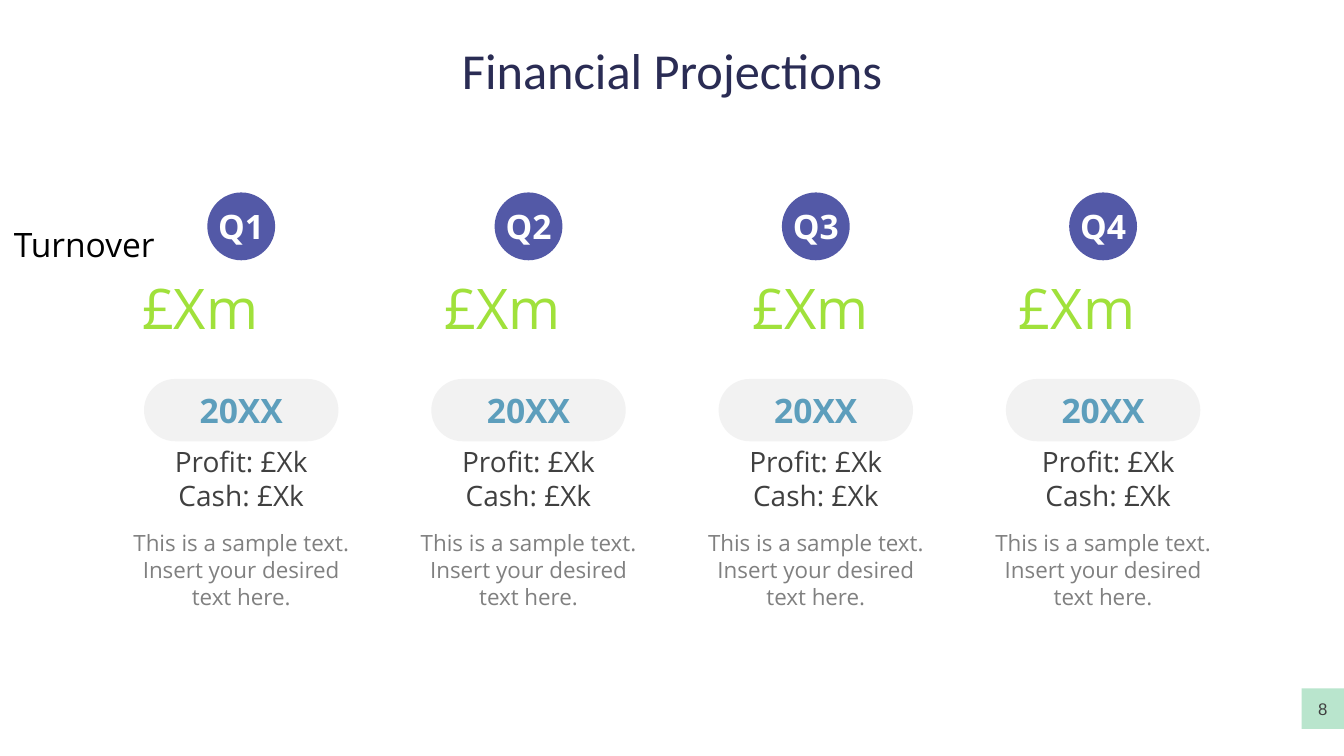
from pptx import Presentation
from pptx import util as u
from pptx.dml.color import RGBColor
from pptx.enum import shapes, text

NAVY = RGBColor(0x2A, 0x2C, 0x54)
INDIGO = RGBColor(0x53, 0x59, 0xA7)
LIME = RGBColor(0xA0, 0xE1, 0x3B)
BLUE = RGBColor(0x5D, 0x9E, 0xBC)
MINT = RGBColor(0xB9, 0xE5, 0xCD)
PALE = RGBColor(0xF2, 0xF2, 0xF2)
GREY = RGBColor(0x80, 0x80, 0x80)
DARK = RGBColor(0x40, 0x40, 0x40)
WHITE = RGBColor(0xFF, 0xFF, 0xFF)
BLACK = RGBColor(0x00, 0x00, 0x00)

BODY_FONT = "Open Sans"
CENTER = text.PP_ALIGN.CENTER
MIDDLE = text.MSO_ANCHOR.MIDDLE

# Lengths in centimetres
FIRST_CENTRE, COLUMN_STEP, COLUMN_WIDTH = 6.08, 7.24, 5.97
PILL_WIDTH, BADGE_SIZE = 4.9, 1.71

# Quarter, left edge of its turnover figure, sideways shift of its results
QUARTERS = [("Q1", 3.33, 0), ("Q2", 10.95, 0),
            ("Q3", 18.72, 0), ("Q4", 25.43, 0.13)]


def write(shape, lines, size, color, font=BODY_FONT, bold=False,
          align=CENTER, anchor=MIDDLE, wrap=True):
    frame = shape.text_frame
    frame.word_wrap = wrap
    frame.vertical_anchor = anchor
    frame.text = "\n".join(lines)
    for para in frame.paragraphs:
        para.alignment = align
        para.font.name = font
        para.font.size = u.Pt(size)
        para.font.bold = bold
        para.font.color.rgb = color


def add_text(page, left, top, width, height, lines, size, color, **style):
    box = page.shapes.add_textbox(u.Cm(left), u.Cm(top), u.Cm(width), u.Cm(height))
    write(box, lines, size, color, **style)
    return box


def add_label(page, kind, left, top, width, height, fill, label, size, color, **style):
    shape = page.shapes.add_shape(kind, u.Cm(left), u.Cm(top), u.Cm(width), u.Cm(height))
    shape.shadow.inherit = False
    shape.fill.solid()
    shape.fill.fore_color.rgb = fill
    shape.line.fill.background()
    shape.text_frame.margin_left = shape.text_frame.margin_right = 0
    write(shape, [label], size, color, **style)
    return shape


def add_quarter(page, centre, name, value_left, shift):
    left = centre - COLUMN_WIDTH / 2
    kinds = shapes.MSO_SHAPE
    add_text(page, left, 13.21, COLUMN_WIDTH, 2.31,
             ["This is a sample text. Insert your desired text here."],
             16, GREY, anchor=text.MSO_ANCHOR.TOP)
    add_text(page, left + shift, 11.07, COLUMN_WIDTH, 1.96,
             ["Profit: £Xk", "Cash: £Xk"], 20, DARK)
    pill = add_label(page, kinds.ROUNDED_RECTANGLE, centre - PILL_WIDTH / 2, 9.55,
                     PILL_WIDTH, 1.57, PALE, "20XX", 24, BLUE, bold=True)
    pill.adjustments[0] = 0.5
    add_text(page, value_left, 6.76, 3.48, 1.96, ["£Xm"], 40, LIME,
             align=text.PP_ALIGN.LEFT, wrap=False)
    add_label(page, kinds.OVAL, centre - BADGE_SIZE / 2, 4.85,
              BADGE_SIZE, BADGE_SIZE, INDIGO, name, 24, WHITE, bold=True)


def main():
    deck = Presentation()
    deck.slide_width, deck.slide_height = u.Cm(33.87), u.Cm(19.05)
    page = deck.slides.add_slide(deck.slide_layouts[6])

    # Title and page number
    add_text(page, 1.7, 0.76, 30.48, 1.98, ["Financial Projections"],
             36, NAVY, font="Calibri")
    add_label(page, shapes.MSO_SHAPE.RECTANGLE, 32.8, 17.35, 1.07, 1.02,
              MINT, "8", 12, DARK, font="Arial")

    # One column per quarter
    for index, (name, value_left, shift) in enumerate(QUARTERS):
        add_quarter(page, FIRST_CENTRE + index * COLUMN_STEP, name, value_left, shift)

    # Row heading
    add_text(page, 0.1, 5.51, 4.09, 1.27, ["Turnover"], 24, BLACK,
             align=text.PP_ALIGN.LEFT, wrap=False)

    deck.save("out.pptx")


if __name__ == "__main__":
    main()
